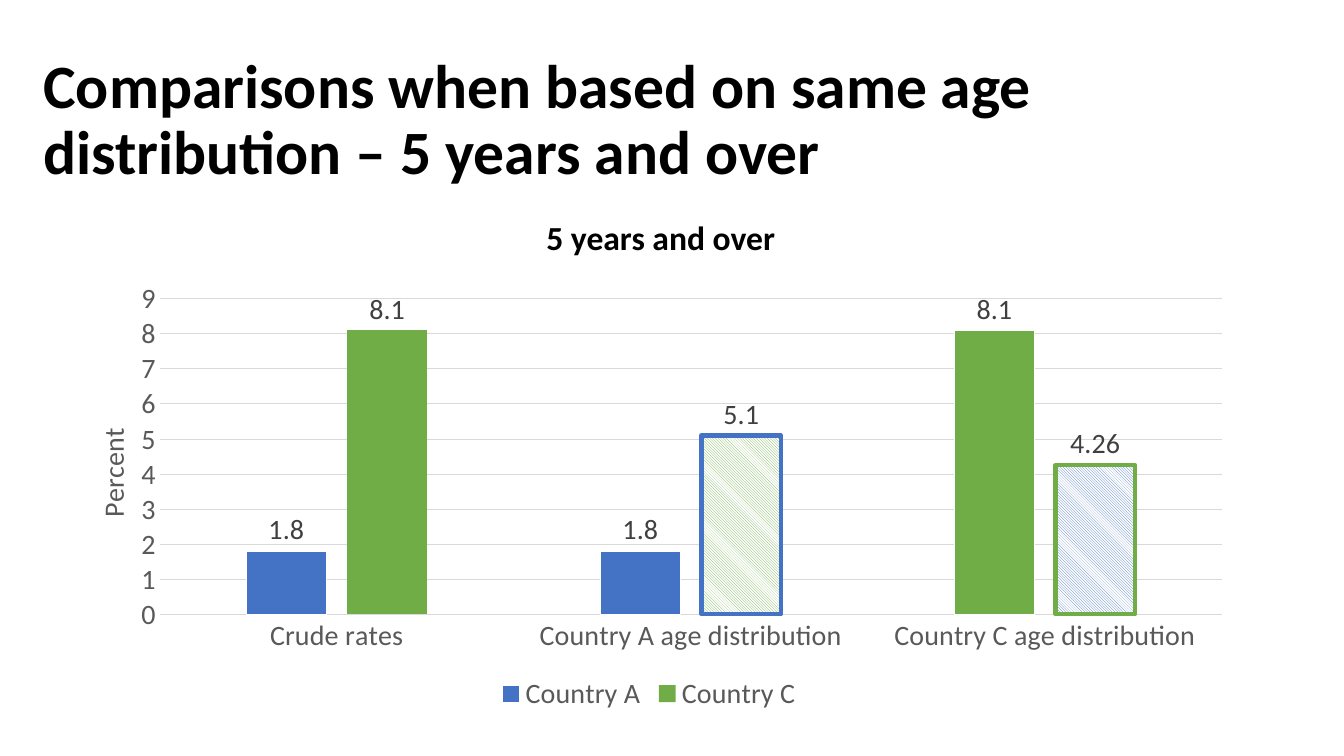
from dataclasses import dataclass

import pptx
import pptx.chart.data
import pptx.dml.color
import pptx.enum.chart
import pptx.enum.dml
import pptx.enum.text
import pptx.oxml
import pptx.oxml.ns
import pptx.util

Pt = pptx.util.Pt


@dataclass(frozen=True)
class Theme:
    font: str = "Calibri"
    black: str = "000000"
    white: str = "FFFFFF"
    grey: str = "595959"
    label: str = "404040"
    grid: str = "D9D9D9"
    blue: str = "4472C4"
    green: str = "70AD47"
    title_size: int = 44
    subtitle_size: int = 24
    chart_size: int = 20


def rgb(code):
    return pptx.dml.color.RGBColor.from_string(code)


def style_font(font, theme, size, color, bold=False):
    font.name, font.size, font.bold = theme.font, Pt(size), bold
    font.color.rgb = rgb(color)


def write_text(frame, text, *, theme, size, color, bold=False, align=None, spacing=None):
    para = frame.paragraphs[0]
    para.alignment = align
    para.line_spacing = spacing
    span = para.add_run()
    span.text = text
    style_font(span.font, theme, size, color, bold)


def set_layout(element, index, inner=False, **fractions):
    """Place a chart part at fixed fractions of the chart area."""
    for old in element.findall(pptx.oxml.ns.qn("c:layout")):
        element.remove(old)
    target = '<c:layoutTarget val="inner"/>' if inner else ""
    modes = '<c:xMode val="edge"/><c:yMode val="edge"/>'
    values = "".join(f'<c:{key} val="{value}"/>' for key, value in fractions.items())
    element.insert(index, pptx.oxml.parse_xml(
        f'<c:layout {pptx.oxml.ns.nsdecls("c")}><c:manualLayout>'
        f"{target}{modes}{values}</c:manualLayout></c:layout>"))


class SlideBuilder:
    def __init__(self, deck, theme):
        self.theme = theme
        self.page = deck.slides.add_slide(deck.slide_layouts[5])

    def title(self, text, left, top, width, height):
        box = self.page.shapes.title
        box.left, box.top, box.width, box.height = map(Pt, (left, top, width, height))
        frame = box.text_frame
        frame.word_wrap = True
        frame.auto_size = pptx.enum.text.MSO_AUTO_SIZE.NONE
        frame.vertical_anchor = pptx.enum.text.MSO_ANCHOR.MIDDLE
        write_text(frame, text, theme=self.theme, size=self.theme.title_size,
                   color=self.theme.black, bold=True,
                   align=pptx.enum.text.PP_ALIGN.LEFT, spacing=0.9)

    def subtitle(self, text, left, top, width, height):
        box = self.page.shapes.add_textbox(*map(Pt, (left, top, width, height)))
        box.text_frame.word_wrap = True
        write_text(box.text_frame, text, theme=self.theme, size=self.theme.subtitle_size,
                   color=self.theme.black, bold=True,
                   align=pptx.enum.text.PP_ALIGN.CENTER)

    def column_chart(self, categories, series, axis_title, maximum, left, top, width, height):
        theme = self.theme
        data = pptx.chart.data.CategoryChartData()
        data.categories = categories
        for name, values in series.items():
            data.add_series(name, values)
        chart = self.page.shapes.add_chart(
            pptx.enum.chart.XL_CHART_TYPE.COLUMN_CLUSTERED,
            *map(Pt, (left, top, width, height)), data).chart
        style_font(chart.font, theme, theme.chart_size, theme.grey)
        chart.has_title = False
        chart.has_legend = True
        chart.legend.position = pptx.enum.chart.XL_LEGEND_POSITION.BOTTOM
        chart.legend.include_in_layout = False
        style_font(chart.legend.font, theme, theme.chart_size, theme.grey)

        for axis in (chart.category_axis, chart.value_axis):
            axis.major_tick_mark = pptx.enum.chart.XL_TICK_MARK.NONE
            axis.minor_tick_mark = pptx.enum.chart.XL_TICK_MARK.NONE
            style_font(axis.tick_labels.font, theme, theme.chart_size, theme.grey)
        scale = chart.value_axis
        scale.minimum_scale, scale.maximum_scale, scale.major_unit = 0, maximum, 1
        scale.format.line.fill.background()
        for line in (chart.category_axis.format.line, scale.major_gridlines.format.line):
            self.outline(line, theme.grid, 0.75)
        write_text(scale.axis_title.text_frame, axis_title, theme=theme,
                   size=theme.chart_size, color=theme.grey)
        set_layout(scale.axis_title._element, 1, x=0.03, y=0.34)

        plot = chart.plots[0]
        plot.gap_width, plot.overlap, plot.vary_by_categories = 219, -27, False
        set_layout(plot._element.getparent(), 0, inner=True, x=0.09, y=0.06, w=0.89, h=0.71)
        return plot

    def outline(self, line, color, width):
        line.color.rgb = rgb(color)
        line.width = Pt(width)

    def color_series(self, series, color):
        series.format.fill.solid()
        series.format.fill.fore_color.rgb = rgb(color)
        series.invert_if_negative = False
        labels = series.data_labels
        labels.show_value = True
        labels.position = pptx.enum.chart.XL_LABEL_POSITION.OUTSIDE_END
        style_font(labels.font, self.theme, self.theme.chart_size, self.theme.label)

    def hatch_point(self, point, color, border):
        fill = point.format.fill
        fill.patterned()
        fill.pattern = pptx.enum.dml.MSO_PATTERN.DARK_DOWNWARD_DIAGONAL
        fill.fore_color.rgb = rgb(color)
        fill.back_color.rgb = rgb(self.theme.white)
        self.outline(point.format.line, border, 3)


def main():
    theme = Theme()
    deck = pptx.Presentation()
    deck.slide_width, deck.slide_height = Pt(960), Pt(540)
    builder = SlideBuilder(deck, theme)
    builder.title("Comparisons when based on same age distribution – 5 years and over",
                  23.8, 34.6, 913, 104.4)
    plot = builder.column_chart(
        ["Crude rates", "Country A age distribution", "Country C age distribution"],
        {"Country A": (1.8, 1.8, 8.1), "Country C": (8.1, 5.1, 4.26)},
        "Percent", 9, 37.4, 194.4, 852.5, 317.5)
    country_a, country_c = plot.series
    builder.color_series(country_a, theme.blue)
    builder.color_series(country_c, theme.green)
    builder.outline(country_a.format.line, theme.white, 0.75)
    swapped = country_a.points[2].format
    swapped.fill.solid()
    swapped.fill.fore_color.rgb = rgb(theme.green)
    builder.outline(swapped.line, theme.white, 0.75)
    builder.hatch_point(country_c.points[1], theme.green, theme.blue)
    builder.hatch_point(country_c.points[2], theme.blue, theme.green)
    builder.subtitle("5 years and over", 380.9, 151.2, 182.2, 65.5)
    deck.save("out.pptx")


if __name__ == "__main__":
    main()
